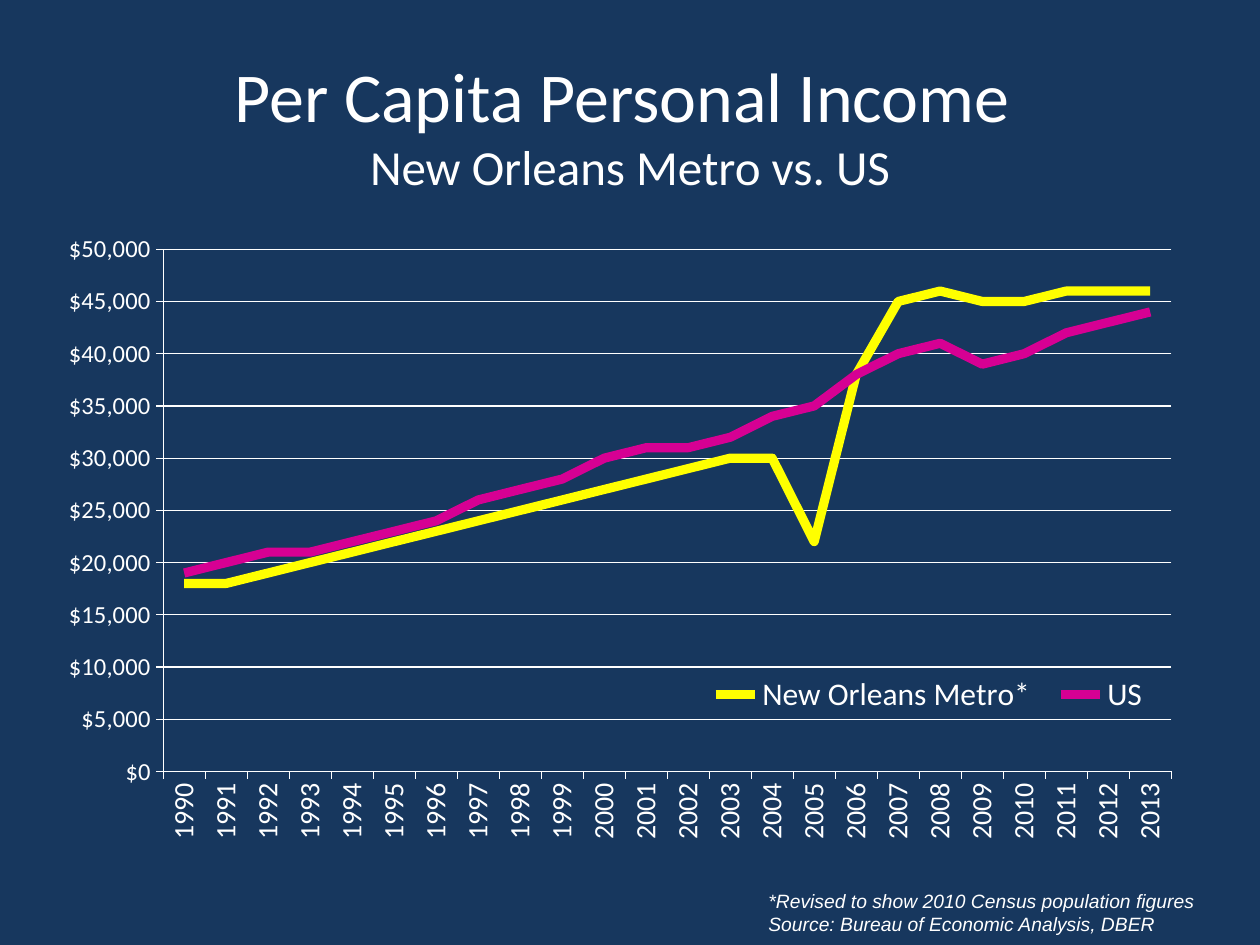
from lxml import etree
from pptx import Presentation
from pptx.chart.data import CategoryChartData
from pptx.dml.color import RGBColor
from pptx.enum.chart import XL_CHART_TYPE, XL_LEGEND_POSITION, XL_MARKER_STYLE, XL_TICK_MARK
from pptx.enum.text import MSO_ANCHOR, MSO_AUTO_SIZE, PP_ALIGN
from pptx.oxml import parse_xml
from pptx.oxml.ns import nsdecls
from pptx.util import Inches, Pt

COLORS = {"background": "17375E", "text": "FFFFFF", "metro": "FFFF00", "us": "D60093"}
YEARS = [str(year) for year in range(1990, 2014)]
INCOME_THOUSANDS = [
    ("New Orleans Metro*", "metro",
     [18, 18, 19, 20, 21, 22, 23, 24, 25, 26, 27, 28,
      29, 30, 30, 22, 38, 45, 46, 45, 45, 46, 46, 46]),
    ("US", "us",
     [19, 20, 21, 21, 22, 23, 24, 26, 27, 28, 30, 31,
      31, 32, 34, 35, 38, 40, 41, 39, 40, 42, 43, 44]),
]


def rgb(name):
    return RGBColor.from_string(COLORS[name])


def style_font(font, size, name="Calibri"):
    font.name = name
    font.size = Pt(size)
    font.color.rgb = rgb("text")


def style_line(line, color, width):
    line.color.rgb = rgb(color)
    line.width = Pt(width)


def set_layout(element, x, y, w, h, inner=False):
    """Place a chart part by fractions of the chart area."""
    for old in element.findall("{*}layout"):
        element.remove(old)
    layout = parse_xml(f"<c:layout {nsdecls('c')}><c:manualLayout/></c:layout>")
    settings = [("layoutTarget", "inner")] if inner else []
    settings += [("xMode", "edge"), ("yMode", "edge"), ("x", x), ("y", y), ("w", w), ("h", h)]
    for tag, value in settings:
        child = etree.SubElement(layout[0], f"{{{layout.nsmap['c']}}}{tag}")
        child.set("val", str(value))
    return layout


def add_title(slide, left, top, width, height):
    title = slide.shapes.title
    title.left, title.top, title.width, title.height = left, top, width, height
    tf = title.text_frame
    tf.vertical_anchor = MSO_ANCHOR.MIDDLE
    p = tf.paragraphs[0]
    p.alignment = PP_ALIGN.CENTER
    style_font(p.font, 40)
    r = p.add_run()
    r.text = "Per Capita Personal Income "
    p.add_line_break()
    r = p.add_run()
    r.text = "New Orleans Metro vs. US"
    r.font.size = Pt(28)


def style_axes(chart):
    category_axis, value_axis = chart.category_axis, chart.value_axis
    for axis, size in ((category_axis, 16), (value_axis, 14)):
        style_font(axis.tick_labels.font, size)
        style_line(axis.format.line, "text", 0.75)
        axis.major_tick_mark = XL_TICK_MARK.OUTSIDE
    category_axis.tick_labels.font  # text properties hold the label rotation
    category_axis._element.find("{*}txPr/{*}bodyPr").set("rot", "-5400000")

    value_axis.minimum_scale = 0
    value_axis.maximum_scale = 50000
    value_axis.major_unit = 5000
    value_axis.tick_labels.number_format = '"$"#,##0'
    value_axis.tick_labels.number_format_is_linked = False
    value_axis.has_major_gridlines = True
    style_line(value_axis.major_gridlines.format.line, "text", 0.75)


def add_income_chart(slide, left, top, width, height):
    data = CategoryChartData(number_format='"$"#,##0')
    data.categories = YEARS
    for name, _, thousands in INCOME_THOUSANDS:
        data.add_series(name, [value * 1000 for value in thousands])
    chart = slide.shapes.add_chart(XL_CHART_TYPE.LINE, left, top, width, height, data).chart
    chart.has_title = False
    style_font(chart.font, 18)
    style_axes(chart)

    plot = chart.plots[0]
    plot.vary_by_categories = False
    for series, (_, color, _) in zip(plot.series, INCOME_THOUSANDS):
        series.smooth = False
        series.marker.style = XL_MARKER_STYLE.NONE
        style_line(series.format.line, color, 5.25)

    chart.has_legend = True
    legend = chart.legend
    legend.position = XL_LEGEND_POSITION.RIGHT
    legend.include_in_layout = True
    style_font(legend.font, 18)
    legend_el = legend._element
    layout = set_layout(legend_el, 0.57, 0.7, 0.4, 0.08)
    legend_el.find("{*}legendPos").addnext(layout)
    plot_area = plot._element.getparent()
    plot_area.insert(0, set_layout(plot_area, 0.113, 0.045, 0.865, 0.816, inner=True))


def add_source_note(slide, left, top, width, height):
    tf = slide.shapes.add_textbox(left, top, width, height).text_frame
    tf.word_wrap = False
    tf.auto_size = MSO_AUTO_SIZE.SHAPE_TO_FIT_TEXT
    lines = ["*Revised to show 2010 Census population figures",
             "Source: Bureau of Economic Analysis, DBER"]
    tf.text = "\n".join(lines)
    for p in tf.paragraphs:
        style_font(p.font, 11, "Arial")
        p.font.italic = True


def main():
    prs = Presentation()
    prs.slide_width, prs.slide_height = Inches(10), Inches(7.5)
    slide = prs.slides.add_slide(prs.slide_layouts[5])
    fill = slide.background.fill
    fill.solid()
    fill.fore_color.rgb = rgb("background")
    add_title(slide, Inches(0.5), Inches(0.3), Inches(9), Inches(1.37))
    add_income_chart(slide, Inches(0.25), Inches(1.75), Inches(9.25), Inches(5.08))
    add_source_note(slide, Inches(6), Inches(7.01), Inches(3.61), Inches(0.47))
    prs.save("out.pptx")


if __name__ == "__main__":
    main()
